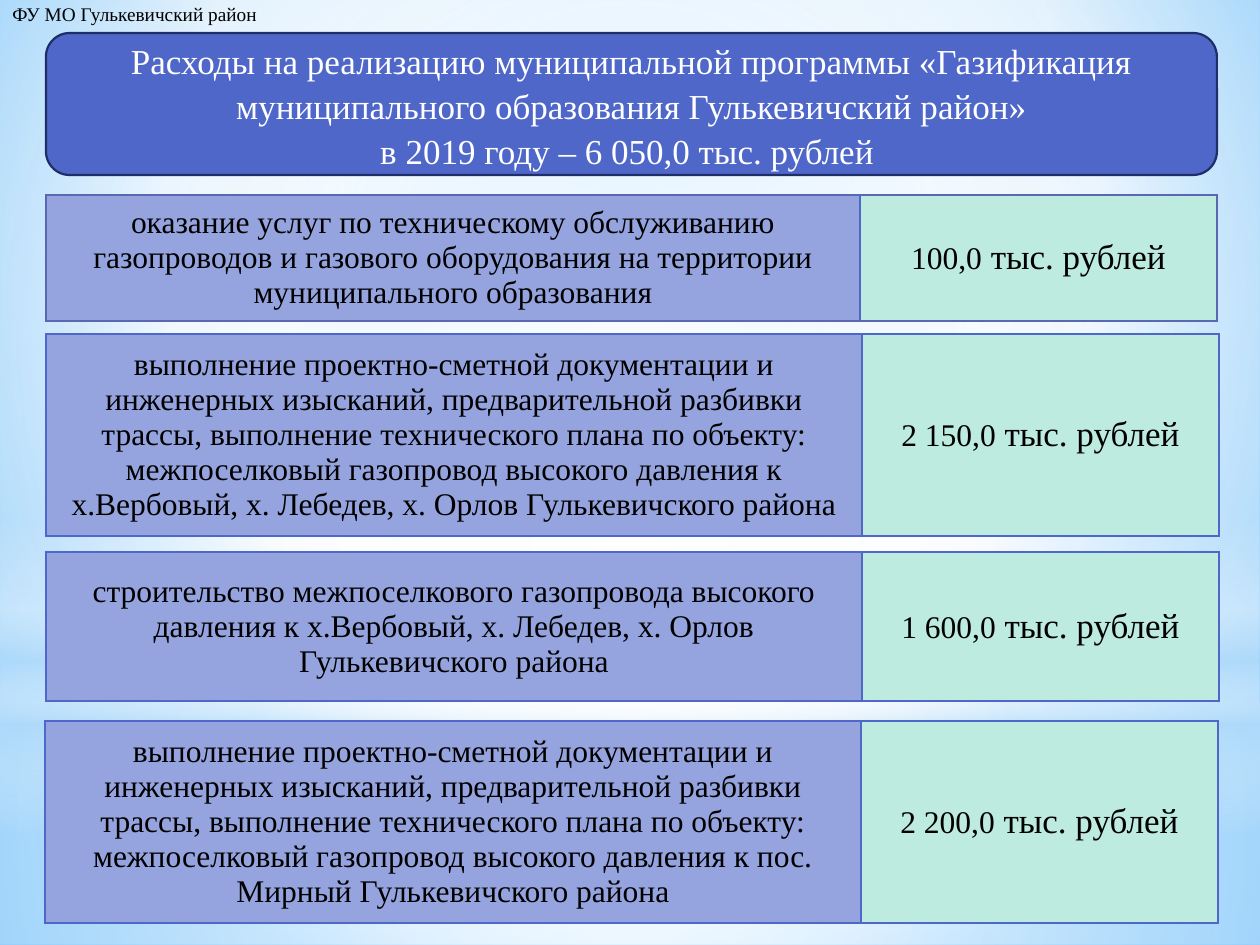
from lxml import etree
from pptx import Presentation
from pptx.dml.color import RGBColor as RGB
from pptx.enum.shapes import MSO_SHAPE as Shape
from pptx.enum.text import MSO_ANCHOR as Anchor, PP_ALIGN as Align
from pptx.oxml.ns import qn
from pptx.util import Emu, Pt

SCALE = 914400 / 126
FONT = "Times New Roman"
HEX = {"white": "FFFFFF", "black": "000000", "sky": "B4DCFA", "pale": "9ED5FF",
       "deep": "5BB9FF", "blue": "4E67C8", "navy": "1F2E69", "dusk": "5968B0",
       "lilac": "95A4DE", "mint": "BEEBDF"}
UNIT = " тыс. рублей"
PLAN = ("выполнение проектно-сметной документации и инженерных изысканий, "
        "предварительной разбивки трассы, выполнение технического плана по объекту: "
        "межпоселковый газопровод высокого давления к ")
FARMS = "х.Вербовый, х. Лебедев, х. Орлов Гулькевичского района"

# left, top, height, width of first column, edge colour, work, sum
ROWS = [
    (46, 195, 126, 814, "dusk", "оказание услуг по техническому обслуживанию газопроводов "
     "и газового оборудования на территории муниципального образования", "100,0"),
    (46, 334, 202, 816, "blue", PLAN + FARMS, "2 150,0"),
    (46, 552, 149, 816, "blue",
     "строительство межпоселкового газопровода высокого давления к " + FARMS, "1 600,0"),
    (45, 721, 202, 816, "blue", PLAN + "пос. Мирный Гулькевичского района", "2 200,0"),
]


def px(*nums):
    return [Emu(round(n * SCALE)) for n in nums]


def color(name):
    return RGB.from_string(HEX[name])


def write(frame, *paras, size=18, ink="black", align=Align.CENTER, space=None):
    """Each paragraph is a list of (text, size) runs or a plain string."""
    for i, runs in enumerate(paras):
        para = frame.add_paragraph() if i else frame.paragraphs[0]
        para.alignment = align
        if space:
            para.line_spacing = space
        for text, pts in [(runs, size)] if isinstance(runs, str) else runs:
            run = para.add_run()
            run.text = text
            run.font.name, run.font.size = FONT, Pt(pts)
            run.font.color.rgb = color(ink)


def blend(props, stops, focus=None):
    """Swap a solid fill for a gradient: round with a focus, else downward."""
    grad = etree.Element(qn("a:gradFill"), rotWithShape="1")
    marks = etree.SubElement(grad, qn("a:gsLst"))
    for pos, name, alpha in stops:
        mark = etree.SubElement(marks, qn("a:gs"), pos=str(pos * 1000))
        tint = etree.SubElement(mark, qn("a:srgbClr"), val=HEX[name])
        if alpha < 100:
            etree.SubElement(tint, qn("a:alpha"), val=str(alpha * 1000))
    if focus:
        way = etree.SubElement(grad, qn("a:path"), {"path": "circle"})
        sides = {side: str(n * 1000) for side, n in zip("ltrb", focus)}
        etree.SubElement(way, qn("a:fillToRect"), sides)
    else:
        etree.SubElement(grad, qn("a:lin"), ang="5400000", scaled="0")
    props.replace(props.find(qn("a:solidFill")), grad)


def add_box(slide, kind, box, fill="white", line=None):
    shape = slide.shapes.add_shape(kind, *px(*box))
    shape.shadow.inherit = False
    shape.fill.solid()
    shape.fill.fore_color.rgb = color(fill)
    if line:
        shape.line.color.rgb = color(line)
        shape.line.width = Pt(1.25)
    else:
        shape.line.fill.background()
    return shape


def add_glow(slide, kind, box, stops, focus=None):
    blend(add_box(slide, kind, box).element.spPr, stops, focus)


def add_sky(slide):
    slide.background.fill.solid()
    blend(slide.element.find(".//" + qn("p:bgPr")),
          [(0, "pale", 100), (60, "white", 100), (100, "deep", 100)], (20, 10, 20, 60))
    mid = (50, 50, 50, 50)
    add_glow(slide, Shape.RECTANGLE, (0, 703, 1260, 242),
             [(0, "white", 91), (37, "white", 76), (100, "sky", 79)], mid)
    add_glow(slide, Shape.RECTANGLE, (0, 0, 1260, 703),
             [(0, "white", 89), (48, "white", 62), (100, "sky", 79)], mid)
    add_glow(slide, Shape.RECTANGLE, (0, 519, 1260, 315),
             [(0, "white", 0), (29, "white", 30), (45, "sky", 40),
              (55, "white", 26), (65, "sky", 60), (100, "white", 0)])
    add_glow(slide, Shape.OVAL, (0, 220, 1260, 703),
             [(0, "white", 100), (56, "white", 0)], mid)


def style(cell, fill, edges):
    cell.vertical_anchor = Anchor.MIDDLE
    cell.fill.solid()
    cell.fill.fore_color.rgb = color(fill)
    props = cell._tc.get_or_add_tcPr()
    for i, (side, name) in enumerate(zip("LRTB", edges)):
        line = etree.Element(qn("a:ln" + side), w=str(Pt(1)))
        paint = etree.SubElement(line, qn("a:solidFill"))
        etree.SubElement(paint, qn("a:srgbClr"), val=HEX[name])
        props.insert(i, line)


def add_row(slide, left, top, high, wide, edge, work, total):
    last = 357
    table = slide.shapes.add_table(1, 2, *px(left, top, wide + last, high)).table
    table.first_row = table.horz_banding = False
    table.columns[0].width, table.columns[1].width = px(wide, last)
    table.rows[0].height = px(high)[0]
    name, cost = table.cell(0, 0), table.cell(0, 1)
    style(name, "lilac", (edge, "blue", edge, edge))
    style(cost, "mint", ("blue", edge, edge, edge))
    write(name.text_frame, work)
    write(cost.text_frame, [(total, 18), (UNIT, 20)])


def main():
    deck = Presentation()
    deck.slide_width, deck.slide_height = px(1260, 945)
    slide = deck.slides.add_slide(deck.slide_layouts[6])
    add_sky(slide)

    # Owner label
    label = slide.shapes.add_textbox(*px(0, -4, 275, 36)).text_frame
    label.word_wrap = False
    write(label, "ФУ МО Гулькевичский район", size=11, align=Align.LEFT)

    # Heading
    head = add_box(slide, Shape.ROUNDED_RECTANGLE, (46, 33, 1171, 142), "blue", "navy")
    head.text_frame.vertical_anchor = Anchor.MIDDLE
    write(head.text_frame,
          "Расходы на реализацию муниципальной программы «Газификация "
          "муниципального образования Гулькевичский район»",
          "в 2019 году – 6 050,0 тыс. рублей ", size=20, ink="white", space=1.08)

    # Spending rows
    for row in ROWS:
        add_row(slide, *row)
    deck.save("out.pptx")


if __name__ == "__main__":
    main()
